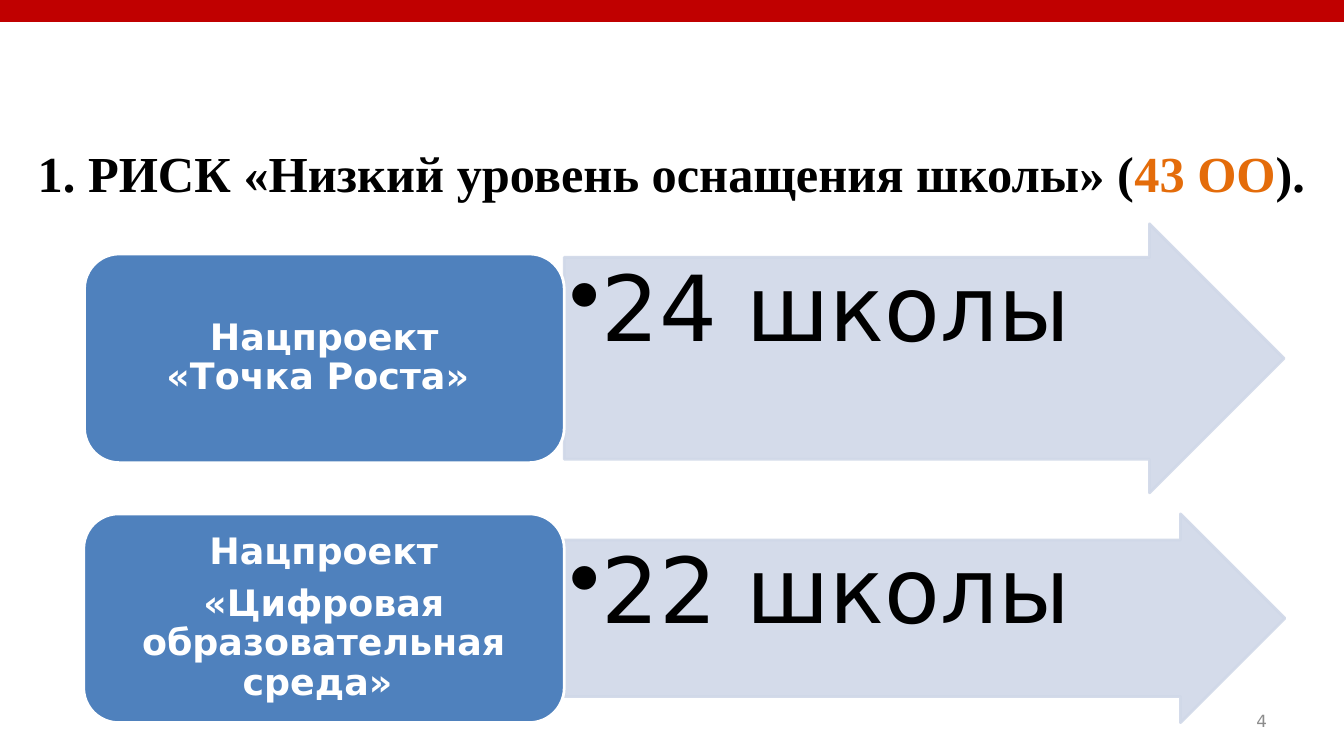
import pptx
import pptx.util
import pptx.dml.color
import pptx.enum.shapes
import pptx.enum.text
import pptx.oxml.ns
import lxml.etree

Cm = pptx.util.Cm
Pt = pptx.util.Pt
RGBColor = pptx.dml.color.RGBColor
PresetShape = pptx.enum.shapes.MSO_SHAPE
Anchor = pptx.enum.text.MSO_ANCHOR
Align = pptx.enum.text.PP_ALIGN
qn = pptx.oxml.ns.qn

RED = RGBColor(0xC0, 0x00, 0x00)
ORANGE = RGBColor(0xE4, 0x6C, 0x0A)
BLUE = RGBColor(0x4F, 0x81, 0xBD)
PALE_BLUE = RGBColor(0xD0, 0xD8, 0xE8)
GREY = RGBColor(0x8C, 0x8C, 0x8C)
BLACK = RGBColor(0x00, 0x00, 0x00)
WHITE = RGBColor(0xFF, 0xFF, 0xFF)

SLIDE_WIDTH, SLIDE_HEIGHT = 33.87, 19.05
JOINT = 14.22
PROJECT_HEIGHT = 5.26
PROJECTS = [
    (2.13, 9.03, 6.78, 18.14, ["Нацпроект\v«Точка Роста» "], "24 школы"),
    (2.11, 15.58, 5.26, 18.16,
     ["Нацпроект", "«Цифровая образовательная среда» "], "22 школы"),
]


class RiskSlide:
    heading_font = "Times New Roman"
    body_font = "DejaVu Sans"

    def __init__(self, slide):
        self.slide = slide

    def style(self, font, name, size, color, bold=False):
        font.name = name
        font.size = Pt(size)
        font.bold = bold
        font.color.rgb = color

    def shape(self, preset, left, top, width, height, fill, line):
        shape = self.slide.shapes.add_shape(
            preset, Cm(left), Cm(top), Cm(width), Cm(height))
        shape.shadow.inherit = False
        shape.fill.solid()
        shape.fill.fore_color.rgb = fill
        shape.line.color.rgb = line
        shape.line.width = Pt(2)
        return shape

    def title(self, parts):
        title = self.slide.shapes.title
        title.left, title.top = Cm(0.64), Cm(3.25)
        title.width, title.height = Cm(32.56), Cm(2.18)
        frame = title.text_frame
        frame.word_wrap = True
        frame.auto_size = pptx.enum.text.MSO_AUTO_SIZE.NONE
        frame.vertical_anchor = Anchor.MIDDLE
        heading = frame.paragraphs[0]
        heading.alignment = Align.CENTER
        for words, color in parts:
            run = heading.add_run()
            run.text = words
            self.style(run.font, self.heading_font, 36, color, True)

    def frame(self, shape, side, anchor):
        frame = shape.text_frame
        frame.word_wrap = True
        frame.vertical_anchor = anchor
        frame.margin_left = frame.margin_right = Cm(side)
        frame.margin_top = frame.margin_bottom = Cm(0.13)
        return frame

    def count_arrow(self, middle, width, height, words):
        arrow = self.shape(PresetShape.RIGHT_ARROW, JOINT, middle - height / 2,
                           width, height, PALE_BLUE, PALE_BLUE)
        arrow.adjustments[0] = 0.75
        arrow.adjustments[1] = 0.5
        for color in arrow.fill._xPr.iter(qn("a:srgbClr")):
            lxml.etree.SubElement(color, qn("a:alpha"), val="90000")
        frame = self.frame(arrow, 0.13, Anchor.TOP)
        frame.text = words
        count = frame.paragraphs[0]
        properties = count._p.get_or_add_pPr()
        properties.set("marL", str(Cm(0.79)))
        properties.set("indent", str(-Cm(0.79)))
        lxml.etree.SubElement(properties, qn("a:buChar"), char="•")
        count.alignment = Align.LEFT
        count.line_spacing = 0.9
        count.space_after = Pt(10)
        self.style(count.runs[0].font, self.body_font, 65, BLACK)

    def project_box(self, left, middle, lines):
        box = self.shape(PresetShape.ROUNDED_RECTANGLE, left,
                         middle - PROJECT_HEIGHT / 2, JOINT - left,
                         PROJECT_HEIGHT, BLUE, WHITE)
        frame = self.frame(box, 0.27, Anchor.MIDDLE)
        frame.text = "\n".join(lines)
        for line in frame.paragraphs:
            line.alignment = Align.CENTER
            line.line_spacing = 0.9
            line.space_after = Pt(9)
            for run in line.runs:
                self.style(run.font, self.body_font, 26, WHITE, True)

    def page_number(self, number):
        box = self.slide.shapes.add_textbox(
            Cm(24.28), Cm(17.65), Cm(7.9), Cm(1.02))
        frame = self.frame(box, 0.25, Anchor.MIDDLE)
        frame.text = number
        frame.paragraphs[0].alignment = Align.RIGHT
        self.style(frame.paragraphs[0].runs[0].font, self.body_font, 12, GREY)


def main():
    deck = pptx.Presentation()
    deck.slide_width, deck.slide_height = Cm(SLIDE_WIDTH), Cm(SLIDE_HEIGHT)
    risk = RiskSlide(deck.slides.add_slide(deck.slide_layouts[5]))
    risk.shape(PresetShape.RECTANGLE, 0, 0, SLIDE_WIDTH, 0.53, RED, RED)
    risk.title([("1. РИСК «Низкий уровень оснащения школы» (", BLACK),
                ("43 ОО", ORANGE), (").", BLACK)])
    for left, middle, arrow_height, arrow_width, lines, schools in PROJECTS:
        risk.count_arrow(middle, arrow_width, arrow_height, schools)
        risk.project_box(left, middle, lines)
    risk.page_number("4")
    deck.save("out.pptx")


if __name__ == "__main__":
    main()
